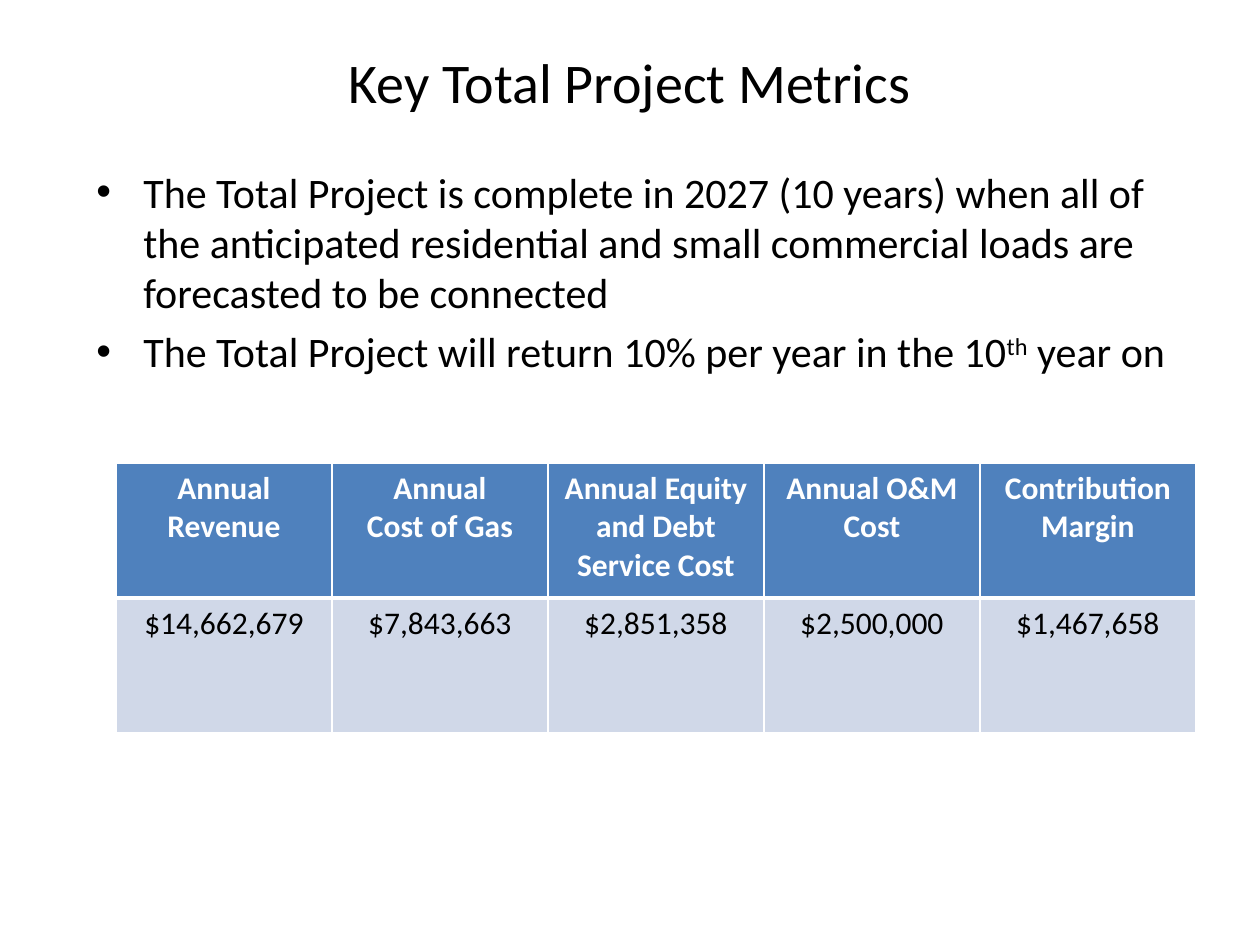
from dataclasses import dataclass

from lxml import etree
from pptx import Presentation, util as u
from pptx.dml.color import RGBColor
from pptx.enum import text
from pptx.oxml.ns import qn

PX = u.Inches(1) / 126


@dataclass(frozen=True)
class Theme:
    font: str = "Calibri"
    ink: str = "000000"
    white: str = "FFFFFF"
    header: str = "4F81BD"
    row: str = "D0D8E8"
    title_size: int = 32
    body_size: int = 24
    table_size: int = 18


THEME = Theme()

TITLE = "Key Total Project Metrics"
# Each bullet is a list of (text, is superscript) runs.
BULLETS = [
    [("The Total Project is complete in 2027 (10 years) when all of the anticipated "
      "residential and small commercial loads are forecasted to be connected", False)],
    [("The Total Project will return 10% per year in the 10", False),
     ("th", True), (" year on", False)],
]
METRICS = [
    ("Annual Revenue", "$14,662,679"),
    ("Annual\nCost of Gas", "$7,843,663"),
    ("Annual Equity and Debt Service Cost", "$2,851,358"),
    ("Annual O&M\nCost", "$2,500,000"),
    ("Contribution Margin", "$1,467,658"),
]


def px(length):
    return u.Emu(round(length * PX))


def style(paragraph, size, color, bold=False):
    font = paragraph.font
    font.name, font.size, font.bold = THEME.font, u.Pt(size), bold
    font.color.rgb = RGBColor.from_string(color)


def add_text_frame(slide, box, anchor):
    frame = slide.shapes.add_textbox(*map(px, box)).text_frame
    frame.word_wrap = True
    frame.vertical_anchor = anchor
    return frame


def add_title(slide, box):
    paragraph = add_text_frame(slide, box, text.MSO_ANCHOR.MIDDLE).paragraphs[0]
    paragraph.text = TITLE
    paragraph.alignment = text.PP_ALIGN.CENTER
    style(paragraph, THEME.title_size, THEME.ink)


def set_bullet(paragraph, indent):
    properties = paragraph._p.get_or_add_pPr()
    properties.set("marL", str(indent))
    properties.set("indent", str(-indent))
    etree.SubElement(properties, qn("a:buFont"), typeface="Arial")
    etree.SubElement(properties, qn("a:buChar"), char="•")


def add_bullets(slide, box):
    frame = add_text_frame(slide, box, text.MSO_ANCHOR.TOP)
    for index, runs in enumerate(BULLETS):
        paragraph = frame.add_paragraph() if index else frame.paragraphs[0]
        set_bullet(paragraph, px(47))
        if index:
            paragraph.space_before = u.Pt(0.2 * THEME.body_size)
        style(paragraph, THEME.body_size, THEME.ink)
        for wording, superscript in runs:
            run = paragraph.add_run()
            run.text = wording
            if superscript:
                run.font._element.set("baseline", "30000")


def set_borders(cell, widths):
    """Draw white borders; widths maps the sides L, R, T, B to points."""
    properties = cell._tc.get_or_add_tcPr()
    for index, (side, width) in enumerate(widths.items()):
        line = etree.Element(qn(f"a:ln{side}"), w=str(u.Pt(width)))
        fill = etree.SubElement(line, qn("a:solidFill"))
        etree.SubElement(fill, qn("a:srgbClr"), val=THEME.white)
        properties.insert(index, line)


def add_metrics_table(slide, box):
    table = slide.shapes.add_table(2, len(METRICS), *map(px, box)).table
    for row in table.rows:
        row.height = px(box[3] / 2)
    for column, values in enumerate(METRICS):
        table.columns[column].width = px(box[2] / len(METRICS))
        for row, value in enumerate(values):
            is_header = row == 0
            cell = table.cell(row, column)
            cell.text = value
            cell.fill.solid()
            cell.fill.fore_color.rgb = RGBColor.from_string(
                THEME.header if is_header else THEME.row)
            set_borders(cell, {"L": 1, "R": 1, "T": 1 if is_header else 3,
                               "B": 3 if is_header else 1})
            for paragraph in cell.text_frame.paragraphs:
                paragraph.alignment = text.PP_ALIGN.CENTER
                style(paragraph, THEME.table_size,
                      THEME.white if is_header else THEME.ink, bold=is_header)


def main():
    presentation = Presentation()
    presentation.slide_width, presentation.slide_height = px(1260), px(945)
    slide = presentation.slides.add_slide(presentation.slide_layouts[6])
    add_title(slide, (63, 3, 1134, 157))
    add_bullets(slide, (84, 160, 1134, 282))
    add_metrics_table(slide, (116, 463, 1080, 270))
    presentation.save("out.pptx")


if __name__ == "__main__":
    main()
